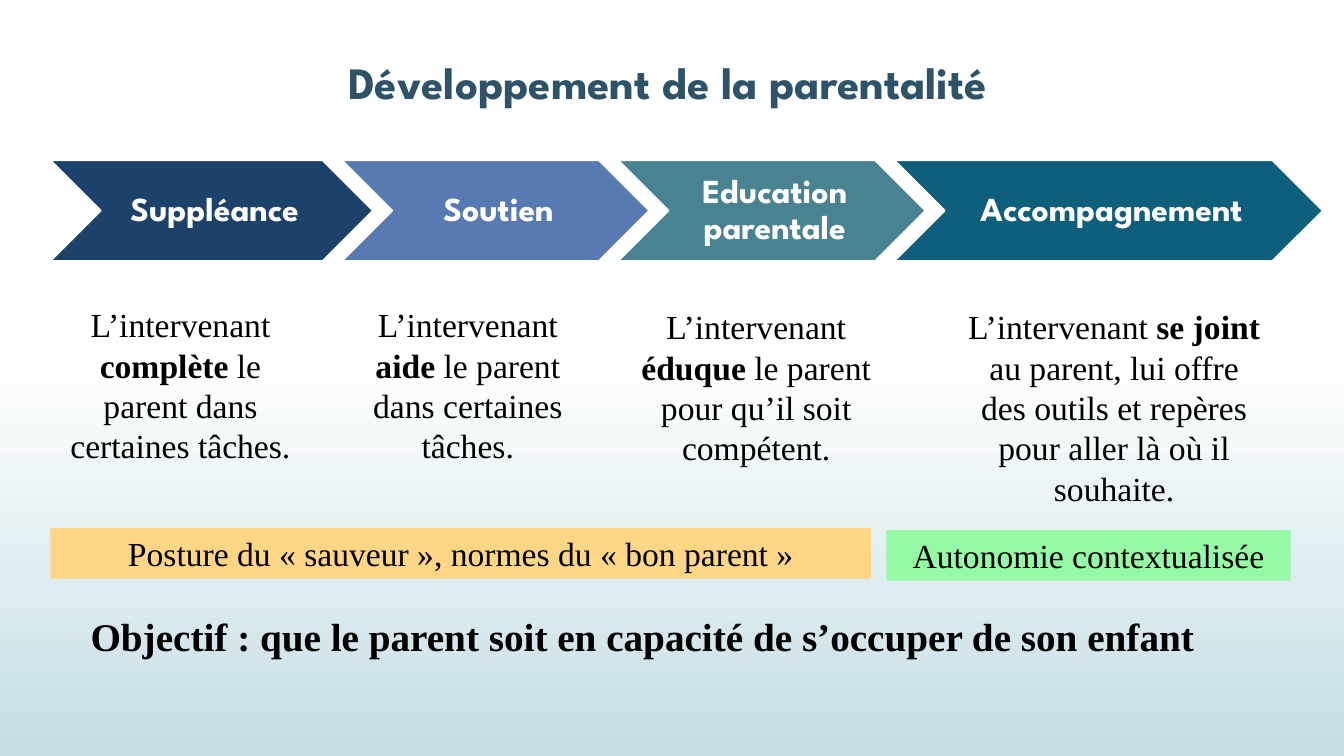
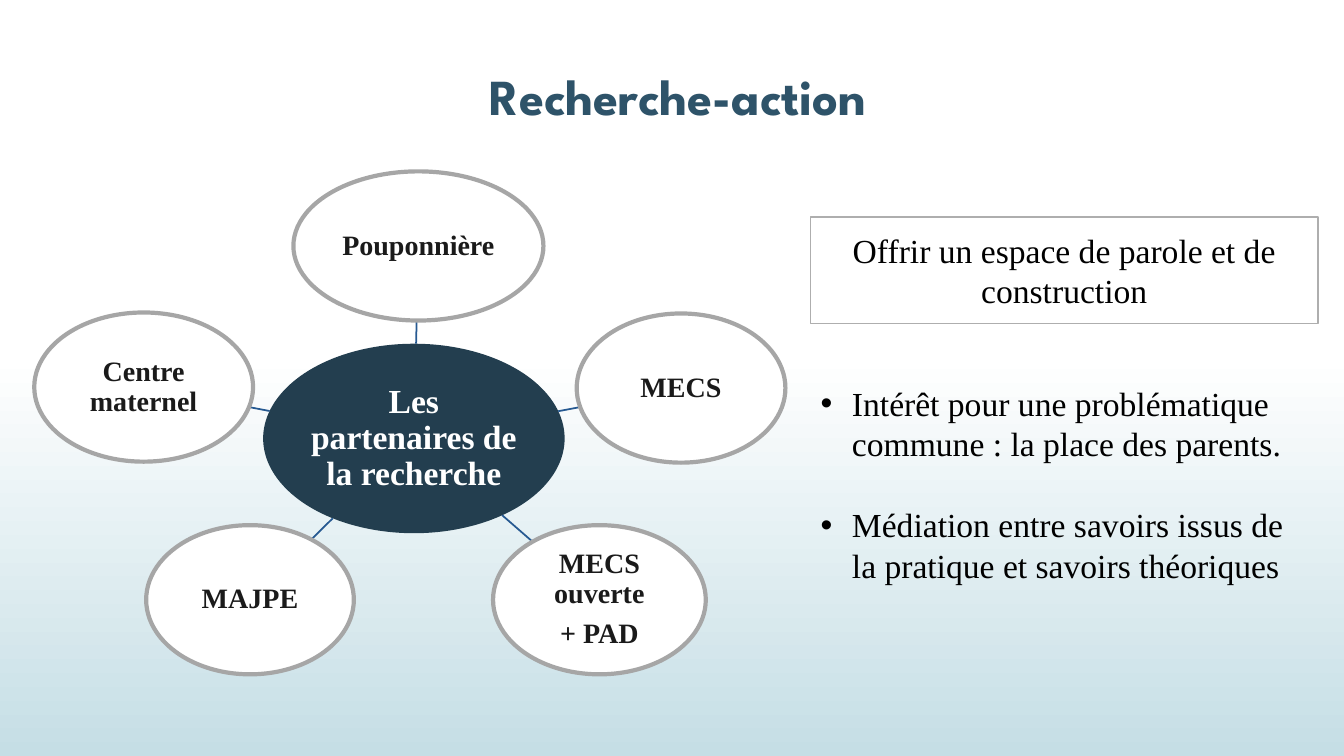
from math import hypot

from pptx import Presentation
from pptx.dml.color import RGBColor
from pptx.enum.shapes import MSO_CONNECTOR, MSO_SHAPE
from pptx.enum.text import MSO_ANCHOR, MSO_AUTO_SIZE, PP_ALIGN
from pptx.oxml.ns import qn
from pptx.util import Inches, Pt
from lxml import etree

CENTER, LEFT = PP_ALIGN.CENTER, PP_ALIGN.LEFT
TOP, MIDDLE = MSO_ANCHOR.TOP, MSO_ANCHOR.MIDDLE
CHEVRON, OVAL, RECTANGLE = MSO_SHAPE.CHEVRON, MSO_SHAPE.OVAL, MSO_SHAPE.RECTANGLE

HEADING_FONT, BODY_FONT = "League Spartan", "Times New Roman"
COLORS = {
    "white": "FFFFFF", "black": "000000", "mist": "C5DEE5", "title": "2E5369",
    "navy": "1C426B", "blue": "567AB1", "teal": "498392", "petrol": "0F5E7C",
    "orange": "FFD686", "green": "95F9A6", "hub": "233E4F", "link": "265991",
    "ring": "A6A6A6", "frame": "AEAEAE", "ink": "1A1A1A",
}

# Stage: label, colour, chevron (left, width), description, its (left, top, width, height)
STAGES = [
    ("Suppléance", "navy", (0.5, 3.2),
     "L’intervenant **complète** le parent dans certaines tâches.", (0.5, 2.97, 2.58, 1.72)),
    ("Soutien", "blue", (3.39, 3.05),
     "L’intervenant **aide** le parent dans certaines tâches.", (3.35, 2.97, 2.58, 1.72)),
    ("Education parentale", "teal", (6.13, 3.05),
     "L’intervenant **éduque** le parent pour qu’il soit compétent.", (6.21, 2.99, 2.58, 1.72)),
    ("Accompagnement", "petrol", (8.87, 4.25),
     "L’intervenant **se joint** au parent, lui offre des outils et repères "
     "pour aller là où il souhaite.", (9.47, 2.99, 3.16, 2.12)),
]
POSTURES = [
    ("Posture du « sauveur », normes du « bon parent »", "orange", (0.5, 5.24, 8.14, 0.5)),
    ("Autonomie contextualisée", "green", (8.79, 5.26, 4.01, 0.5)),
]
GOAL = "Objectif : que le parent soit en capacité de s’occuper de son enfant"

HUB = ("Les partenaires de la recherche", (2.61, 3.41, 2.99, 1.88))
PARTNER_HEIGHT = 1.48
# Partner: paragraphs, left, top, width
PARTNERS = [
    (["Pouponnière"], 2.91, 1.7, 2.48),
    (["MECS"], 5.72, 3.11, 2.07),
    (["MECS ouverte", "+ PAD"], 4.89, 5.21, 2.11),
    (["MAJPE"], 1.45, 5.21, 2.06),
    (["Centre maternel"], 0.34, 3.1, 2.17),
]
PURPOSE = "Offrir un espace de parole et de construction"
REASONS = [
    "Intérêt pour une problématique commune : la place des parents.",
    "Médiation entre savoirs issus de la pratique et savoirs théoriques",
]


def rgb(name):
    return RGBColor.from_string(COLORS[name])


def write_text(shape, paragraphs, font=BODY_FONT, size=24, color="black", bold=False,
               align=CENTER, anchor=TOP, inset=None, line_spacing=None, gap=0):
    """Fill a shape with paragraphs; text between ** marks is bold."""
    frame = shape.text_frame
    frame.word_wrap = True
    frame.auto_size = MSO_AUTO_SIZE.NONE
    frame.vertical_anchor = anchor
    if inset is not None:
        frame.margin_left = frame.margin_right = Inches(inset)
        frame.margin_top = frame.margin_bottom = Inches(inset)
    for index, text in enumerate(paragraphs):
        paragraph = frame.add_paragraph() if index else frame.paragraphs[0]
        paragraph.alignment = align
        paragraph.space_before = Pt(gap if index else 0)
        if line_spacing:
            paragraph.line_spacing = line_spacing
        for part, piece in enumerate(text.split("**")):
            run = paragraph.add_run()
            run.text = piece
            run.font.name = font
            run.font.size = Pt(size)
            run.font.bold = bold or part % 2 == 1
            run.font.color.rgb = rgb(color)


def place(shape, box):
    shape.left, shape.top, shape.width, shape.height = map(Inches, box)


def add_shape(slide, kind, box, fill, line=None, line_width=1.25):
    shape = slide.shapes.add_shape(kind, *map(Inches, box))
    shape.shadow.inherit = False
    shape.fill.solid()
    shape.fill.fore_color.rgb = rgb(fill)
    if line:
        shape.line.color.rgb = rgb(line)
        shape.line.width = Pt(line_width)
    else:
        shape.line.fill.background()
    return shape


def add_text_box(slide, box, text, **text_format):
    write_text(slide.shapes.add_textbox(*map(Inches, box)), [text], **text_format)


def add_slide(presentation, layout_index, title, box, size):
    slide = presentation.slides.add_slide(presentation.slide_layouts[layout_index])
    place(slide.shapes.title, box)
    write_text(slide.shapes.title, [title], font=HEADING_FONT, size=size,
               color="title", bold=True)
    return slide


def set_background(master):
    fill = master.background.fill
    fill.gradient()
    fill.gradient_angle = 270
    for stop, position, color in zip(fill.gradient_stops, (0.47, 1), ("white", "mist")):
        stop.position = position
        stop.color.rgb = rgb(color)


def center_of(box):
    left, top, width, height = box
    return left + width / 2, top + height / 2


def edge_point(box, target):
    """Point where an ellipse's outline meets the line from its centre to target."""
    x, y = center_of(box)
    dx, dy = target[0] - x, target[1] - y
    scale = 1 / hypot(dx / (box[2] / 2), dy / (box[3] / 2))
    return Inches(x + dx * scale), Inches(y + dy * scale)


def add_link(slide, first, second):
    start = edge_point(first, center_of(second))
    end = edge_point(second, center_of(first))
    link = slide.shapes.add_connector(MSO_CONNECTOR.STRAIGHT, *start, *end)
    link.line.color.rgb = rgb("link")
    link.line.width = Pt(1.25)
    etree.SubElement(link._element.spPr, qn("a:effectLst"))


def build_stages(presentation):
    slide = add_slide(presentation, 5, "Développement de la parentalité",
                      (0.5, 0.49, 12.25, 1.4), 32)
    for label, color, (left, width), description, box in STAGES:
        chevron = add_shape(slide, CHEVRON, (left, 1.59, width, 1), color, "white")
        write_text(chevron, [label], font=HEADING_FONT, color="white", bold=True,
                   anchor=MIDDLE, inset=0.04, line_spacing=0.9)
        chevron.text_frame.margin_left = Inches(0.1)
        add_text_box(slide, box, description)
    for text, color, box in POSTURES:
        write_text(add_shape(slide, RECTANGLE, box, color), [text])
    add_text_box(slide, (0.8, 6.03, 11.64, 0.57), GOAL, size=28, bold=True, align=LEFT)


def build_partners(presentation):
    slide = add_slide(presentation, 1, "Recherche-action", (0.58, 0.6, 12.29, 1.4), 36)
    hub_text, hub_box = HUB
    hub = add_shape(slide, OVAL, hub_box, "hub")
    write_text(hub, [hub_text], color="white", bold=True, anchor=MIDDLE,
               inset=0.02, line_spacing=0.9)
    for paragraphs, left, top, width in PARTNERS:
        box = (left, top, width, PARTNER_HEIGHT)
        add_link(slide, hub_box, box)
        partner = add_shape(slide, OVAL, box, "white", "ring", 3)
        write_text(partner, paragraphs, size=20, color="ink", bold=True, anchor=MIDDLE,
                   inset=0.01, line_spacing=0.9, gap=7)

    reasons = slide.placeholders[1]
    place(reasons, (8.04, 3.75, 5.03, 2.12))
    write_text(reasons, REASONS, align=LEFT, gap=29)
    for paragraph in reasons.text_frame.paragraphs:
        properties = paragraph._p.get_or_add_pPr()
        properties.set("marL", str(Inches(0.31)))
        properties.set("indent", str(-Inches(0.31)))

    purpose = add_shape(slide, RECTANGLE, (8.04, 2.15, 5.03, 1.06), "white", "frame")
    write_text(purpose, [PURPOSE], anchor=MIDDLE)


def main():
    presentation = Presentation()
    presentation.slide_width, presentation.slide_height = Inches(13.33), Inches(7.5)
    set_background(presentation.slide_master)
    build_stages(presentation)
    build_partners(presentation)
    presentation.save("out.pptx")


if __name__ == "__main__":
    main()
